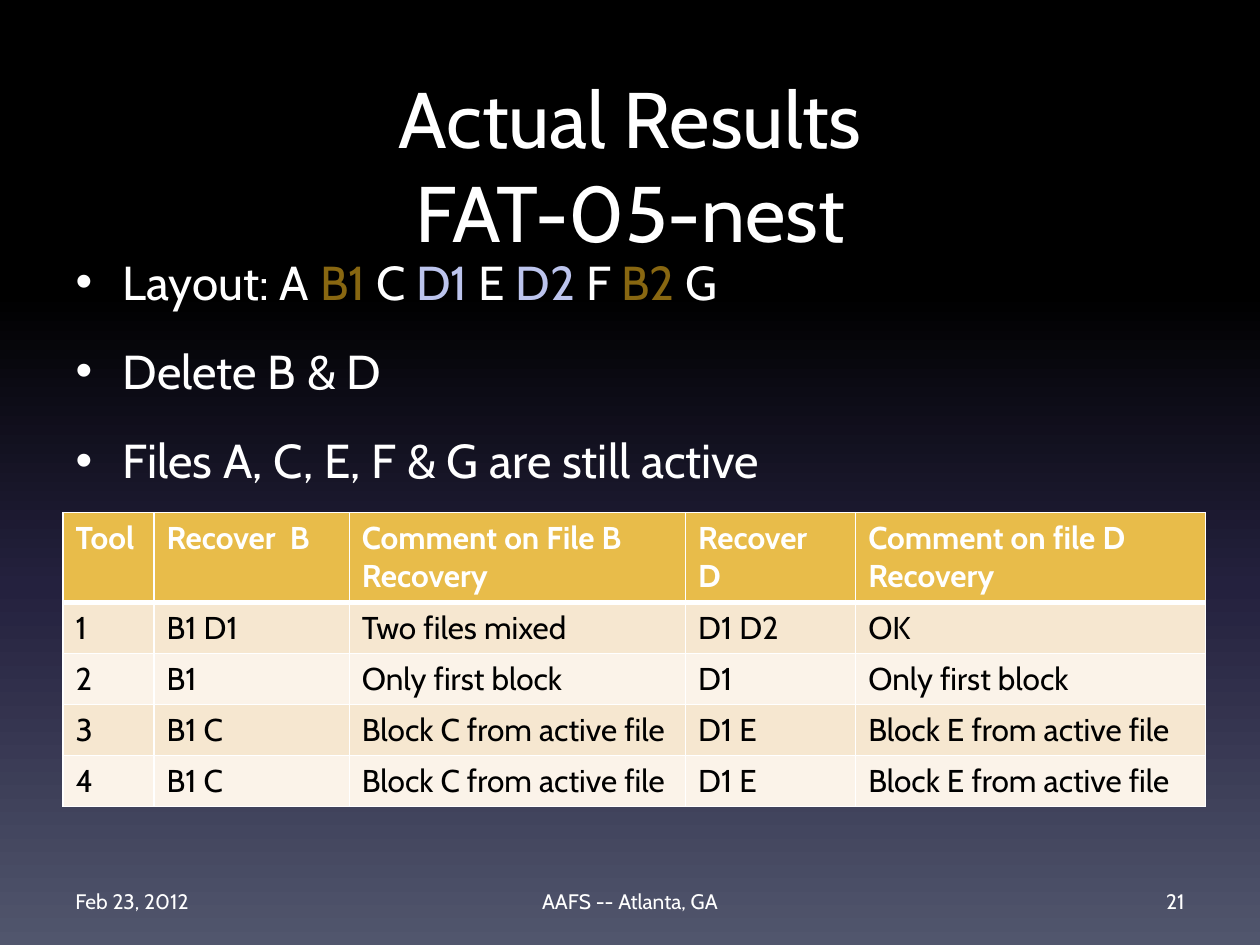
from lxml.etree import SubElement
from pptx import Presentation
from pptx.dml.color import RGBColor
from pptx.enum.text import MSO_ANCHOR, MSO_AUTO_SIZE, PP_ALIGN
from pptx.oxml import parse_xml
from pptx.oxml.ns import nsdecls, qn
from pptx.util import Pt

FONT = "Cabin"
HEX = {
    "white": "FFFFFF", "black": "000000", "brown": "886711", "lilac": "BCC4ED",
    "head": "E8BC4A", "odd": "F6E7D0", "even": "FBF3E9",
    "night": "24213E", "slate": "51566D",
}
SKY = [(0, "black"), (31, "black"), (62, "night"), (100, "slate")]

TITLE = ["Actual Results", "FAT-05-nest"]
POINTS = [
    [("Layout: A ", "white"), ("B1", "brown"), (" C ", "white"),
     ("D1", "lilac"), (" E ", "white"), ("D2", "lilac"), (" F ", "white"),
     ("B2", "brown"), (" G", "white")],
    [("Delete B & D", "white")],
    [("Files A, C, E, F & G are still active", "white")],
]
ROWS = [
    ["Tool", "Recover  B", "Comment on File B Recovery", "Recover  D",
     "Comment on file D Recovery"],
    ["1", "B1 D1", "Two files mixed", "D1 D2", "OK"],
    ["2", "B1", "Only first block", "D1", "Only first block"],
    ["3", "B1 C", "Block C from active file", "D1 E", "Block E from active file"],
    ["4", "B1 C", "Block C from active file", "D1 E", "Block E from active file"],
]
WIDTHS = [52, 111.6, 192.2, 97.2, 200]
HEAD_H, ROW_H = 50.9, 29.2
FOOT = [  # text, left, width, alignment
    ("Feb 23, 2012", 36, 168, PP_ALIGN.LEFT),
    ("AAFS -- Atlanta, GA", 246, 228, PP_ALIGN.CENTER),
    ("21", 516, 168, PP_ALIGN.RIGHT),
]


def add_run(para, text, size, color, bold=False):
    run = para.add_run()
    run.text = text
    font = run.font
    font.name, font.size, font.bold = FONT, Pt(size), bold
    font.color.rgb = RGBColor.from_string(HEX[color])


def place(shape, left, top, width, height, anchor):
    shape.left, shape.top = Pt(left), Pt(top)
    shape.width, shape.height = Pt(width), Pt(height)
    frame = shape.text_frame
    frame.auto_size, frame.word_wrap = MSO_AUTO_SIZE.NONE, True
    frame.vertical_anchor = anchor
    return frame


def paint_sky(slide):
    """Give the slide a vertical gradient with the stops in SKY."""
    stops = "".join(
        f'<a:gs pos="{pos * 1000}"><a:srgbClr val="{HEX[name]}"/></a:gs>'
        for pos, name in SKY)
    back = parse_xml(
        f'<p:bg {nsdecls("p", "a")}><p:bgPr><a:gradFill rotWithShape="1">'
        f'<a:gsLst>{stops}</a:gsLst><a:lin ang="5400000" scaled="0"/>'
        '</a:gradFill><a:effectLst/></p:bgPr></p:bg>')
    slide.element.cSld.insert(0, back)


def rule_cell(cell, top, bottom):
    """Draw white borders; lines must precede the fill in the cell XML."""
    props = cell._tc.get_or_add_tcPr()
    for side, width in (("L", 1), ("R", 1), ("T", top), ("B", bottom)):
        line = SubElement(props, qn(f"a:ln{side}"), w=str(Pt(width)))
        fill = SubElement(line, qn("a:solidFill"))
        SubElement(fill, qn("a:srgbClr"), val=HEX["white"])


def add_grid(slide):
    height = HEAD_H + ROW_H * (len(ROWS) - 1)
    table = slide.shapes.add_table(
        len(ROWS), len(WIDTHS), Pt(36), Pt(293), Pt(sum(WIDTHS)), Pt(height)).table
    for col, width in zip(table.columns, WIDTHS):
        col.width = Pt(width)
    for r, texts in enumerate(ROWS):
        head = r == 0
        table.rows[r].height = Pt(HEAD_H if head else ROW_H)
        shade = "head" if head else "odd" if r % 2 else "even"
        for c, text in enumerate(texts):
            cell = table.cell(r, c)
            rule_cell(cell, 3 if r == 1 else 1, 3 if head else 1)
            cell.fill.solid()
            cell.fill.fore_color.rgb = RGBColor.from_string(HEX[shade])
            add_run(cell.text_frame.paragraphs[0], text, 18,
                    "white" if head else "black", head)


def main():
    deck = Presentation()
    deck.slide_width, deck.slide_height = Pt(720), Pt(540)
    slide = deck.slides.add_slide(deck.slide_layouts[1])
    paint_sky(slide)

    title, body = slide.placeholders
    para = place(title, 36, 36, 648, 90, MSO_ANCHOR.TOP).paragraphs[0]
    para.alignment = PP_ALIGN.CENTER
    for i, text in enumerate(TITLE):
        if i:
            para.add_line_break()
        add_run(para, text, 45, "white")

    frame = place(body, 36, 126, 648, 158.4, MSO_ANCHOR.MIDDLE)
    for i, runs in enumerate(POINTS):
        para = frame.add_paragraph() if i else frame.paragraphs[0]
        para.line_spacing, para.space_before = 1.4, Pt(5.4)
        for text, color in runs:
            add_run(para, text, 27.2, color)

    for text, left, width, align in FOOT:
        box = slide.shapes.add_textbox(0, 0, 0, 0)
        para = place(box, left, 500.4, width, 28.8, MSO_ANCHOR.MIDDLE).paragraphs[0]
        para.alignment = align
        add_run(para, text, 12, "white")

    add_grid(slide)
    deck.save("out.pptx")


if __name__ == "__main__":
    main()
